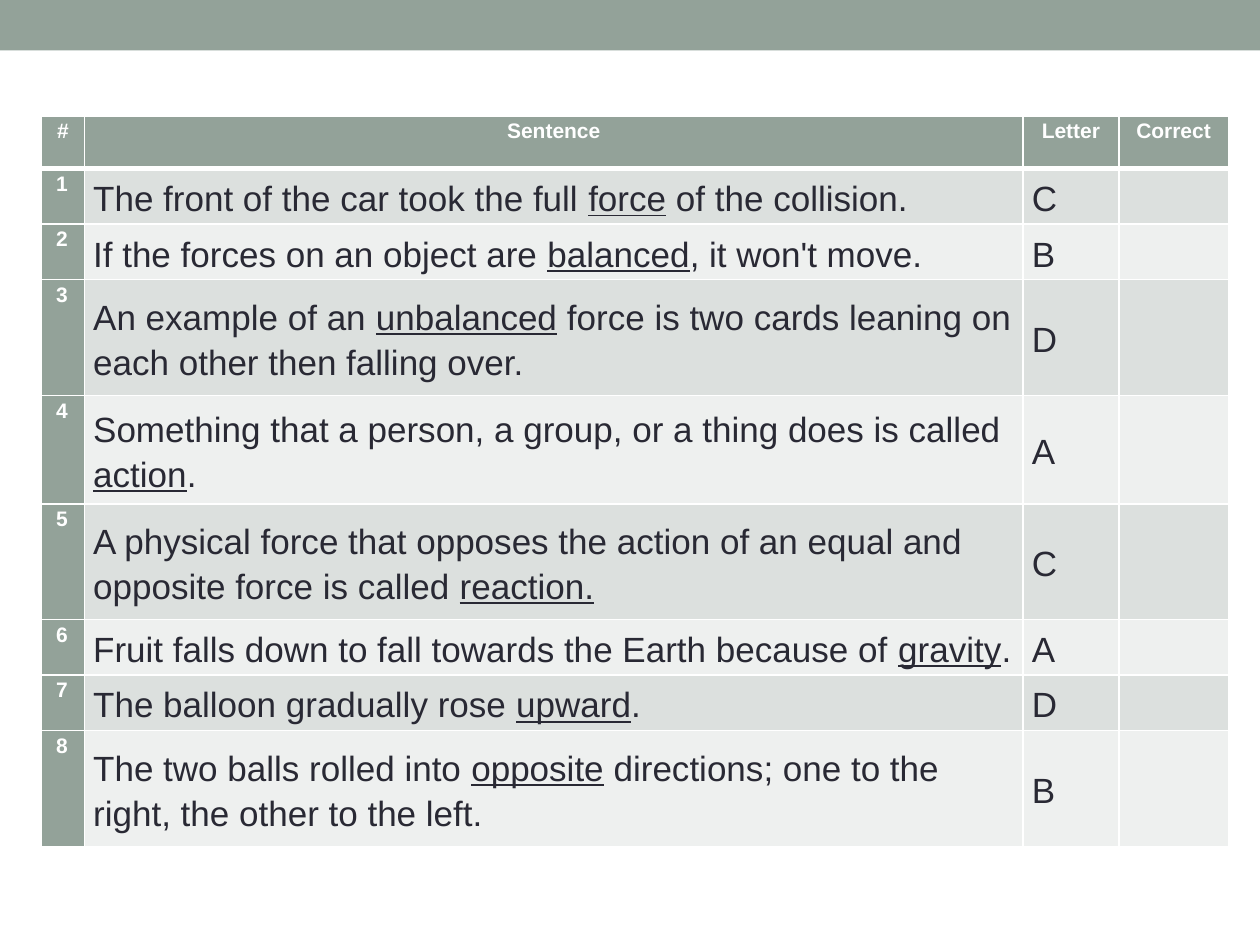
import pptx
import pptx.util
import pptx.dml.color
import pptx.enum.shapes
import pptx.enum.text
import pptx.oxml
import pptx.oxml.ns
from pptx.util import Inches

FONT = "Arial"
COLORS = {
    "sage": "93A299",
    "band_dark": "DCE0DE",
    "band_light": "EEF0EF",
    "ink": "292934",
    "white": "FFFFFF",
}
HEADINGS = ["#", "Sentence", "Letter", "Correct"]
COLUMN_WIDTHS = [0.34, 7.45, 0.76, 0.87]
HEADER_HEIGHT = 0.42
# Before the key word, key word, after it, answer letter, row height
QUESTIONS = [
    ("The front of the car took the full ", "force", " of the collision.", "C", 0.44),
    ("If the forces on an object are ", "balanced", ", it won't move.", "B", 0.44),
    ("An example of an ", "unbalanced",
     " force is two cards leaning on each other then falling over.", "D", 0.92),
    ("Something that a person, a group, or a thing does is called ", "action", ".", "A", 0.86),
    ("A physical force that opposes the action of an equal and opposite force is called ",
     "reaction.", "", "C", 0.92),
    ("Fruit falls down to fall towards the Earth because of ", "gravity", ".", "A", 0.44),
    ("The balloon gradually rose ", "upward", ".", "D", 0.44),
    ("The two balls rolled into ", "opposite",
     " directions; one to the right, the other to the left.", "B", 0.92),
]


def rgb(name):
    return pptx.dml.color.RGBColor.from_string(COLORS[name])


def add_top_band(slide):
    band = slide.shapes.add_shape(
        pptx.enum.shapes.MSO_SHAPE.RECTANGLE, 0, 0, Inches(10), Inches(0.4))
    band.shadow.inherit = False
    band.fill.solid()
    band.fill.fore_color.rgb = rgb("sage")
    band.line.fill.background()


def style_cell(cell, fill, top=1, bottom=1):
    """Fill a cell and draw its white borders, widths in points."""
    properties = cell._tc.get_or_add_tcPr()
    for side, width in (("L", 1), ("R", 1), ("T", top), ("B", bottom)):
        properties.append(pptx.oxml.parse_xml(
            f'<a:ln{side} {pptx.oxml.ns.nsdecls("a")} w="{pptx.util.Pt(width)}">'
            f'<a:solidFill><a:srgbClr val="{COLORS["white"]}"/></a:solidFill>'
            f'</a:ln{side}>'))
    cell.fill.solid()
    cell.fill.fore_color.rgb = rgb(fill)


def start_paragraph(cell):
    cell.margin_left = cell.margin_right = Inches(0.07)
    cell.margin_top = cell.margin_bottom = 0
    paragraph = cell.text_frame.paragraphs[0]
    paragraph.line_spacing = 1.15
    return paragraph


def add_run(paragraph, text, size, color, bold=False, underline=False):
    run = paragraph.add_run()
    run.text = text
    run.font.name = FONT
    run.font.size = pptx.util.Pt(size)
    run.font.bold = bold
    run.font.underline = underline
    run.font.color.rgb = rgb(color)


def write_label(cell, text, alignment):
    paragraph = start_paragraph(cell)
    paragraph.alignment = alignment
    paragraph.space_before = paragraph.space_after = pptx.util.Pt(6)
    add_run(paragraph, text, 12, "white", bold=True)


def write_answer(cell, before, key_word="", after=""):
    """Write body text with the key word underlined."""
    cell.vertical_anchor = pptx.enum.text.MSO_ANCHOR.MIDDLE
    paragraph = start_paragraph(cell)
    for text in (before, key_word, after):
        if text:
            add_run(paragraph, text, 20, "ink", underline=text == key_word)


def add_question_table(slide):
    heights = [HEADER_HEIGHT] + [question[-1] for question in QUESTIONS]
    table = slide.shapes.add_table(
        len(heights), len(HEADINGS), Inches(0.33), Inches(0.92),
        Inches(sum(COLUMN_WIDTHS)), Inches(sum(heights))).table
    for column, width in zip(table.columns, COLUMN_WIDTHS):
        column.width = Inches(width)
    for row, height in zip(table.rows, heights):
        row.height = Inches(height)

    align = pptx.enum.text.PP_ALIGN
    for cell, heading in zip(table.rows[0].cells, HEADINGS):
        style_cell(cell, "sage", bottom=3)
        write_label(cell, heading, align.CENTER)

    for number, (before, key_word, after, letter, _) in enumerate(QUESTIONS, 1):
        band = "band_dark" if number % 2 else "band_light"
        cells = list(table.rows[number].cells)
        for cell, fill in zip(cells, ["sage", band, band, band]):
            style_cell(cell, fill, top=3 if number == 1 else 1)
        write_label(cells[0], f" {number}", align.JUSTIFY)
        write_answer(cells[1], before, key_word, after)
        write_answer(cells[2], letter)


def main():
    presentation = pptx.Presentation()
    presentation.slide_width = Inches(10)
    presentation.slide_height = Inches(7.5)
    slide = presentation.slides.add_slide(presentation.slide_layouts[6])
    add_top_band(slide)
    add_question_table(slide)
    presentation.save("out.pptx")


if __name__ == "__main__":
    main()
